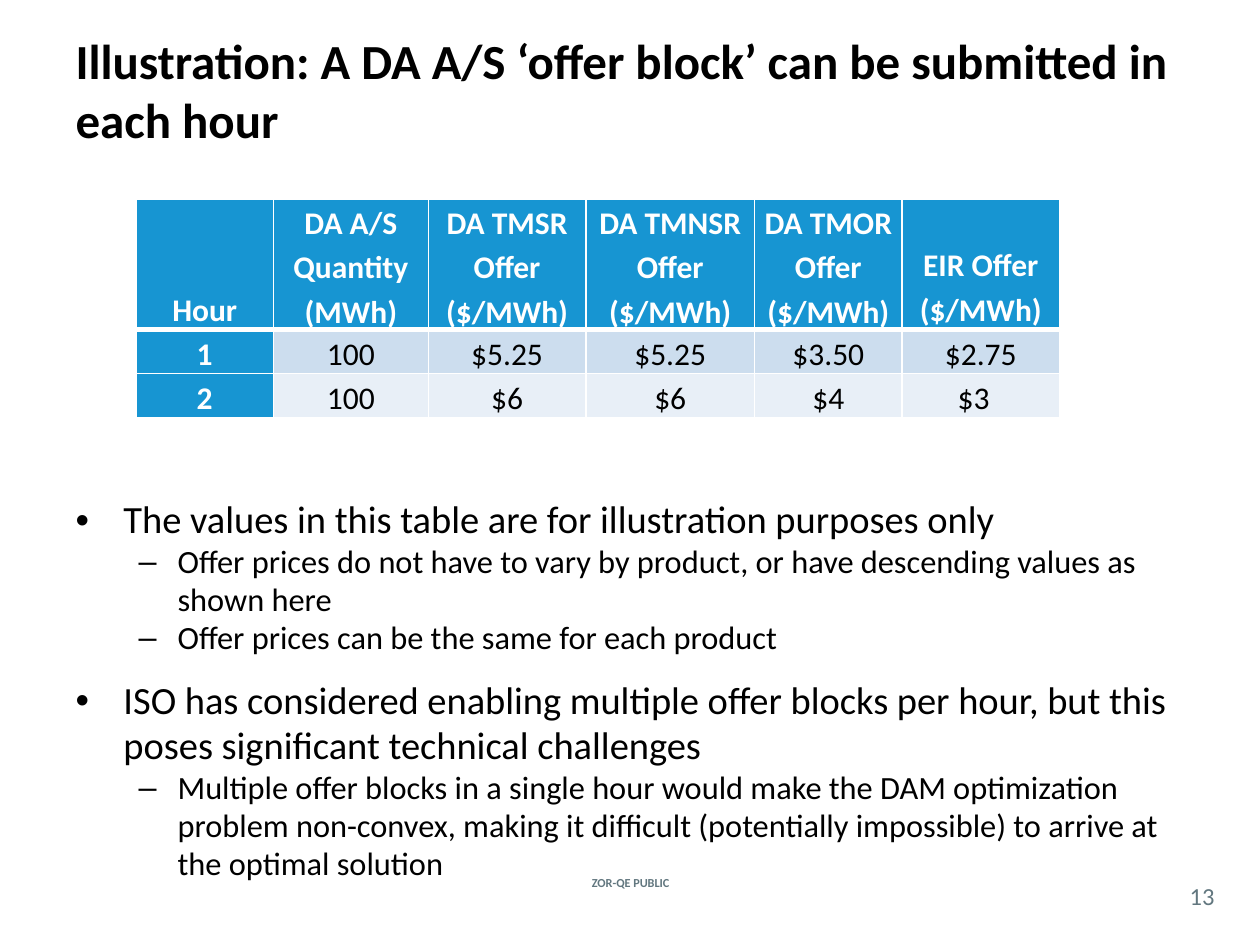
from lxml import etree
from pptx import Presentation
from pptx.dml.color import RGBColor
from pptx.enum.text import MSO_ANCHOR, MSO_AUTO_SIZE, PP_ALIGN
from pptx.oxml.ns import qn
from pptx.util import Inches, Pt

LEFT, CENTER = PP_ALIGN.LEFT, PP_ALIGN.CENTER
MIDDLE, BOTTOM, TOP = MSO_ANCHOR.MIDDLE, MSO_ANCHOR.BOTTOM, MSO_ANCHOR.TOP
NO_FIT = MSO_AUTO_SIZE.NONE
WIDE, HIGH = Inches(10), Inches(7.5)
FACE = "Calibri"
COLORS = {"ink": "000000", "white": "FFFFFF", "blue": "1795D2",
          "odd": "CCDDEE", "even": "E8EFF7", "gray": "62777F"}

TITLE = "Illustration: A DA A/S ‘offer block’ can be submitted in each hour"
COLS = [1.09, 1.23, 1.25, 1.34, 1.17, 1.25]
ROWS = [1.03, 0.35, 0.35]
OFFERS = [
    ["Hour", "DA A/S Quantity (MWh)", "DA TMSR Offer ($/MWh)",
     "DA TMNSR Offer ($/MWh)", "DA TMOR Offer ($/MWh)", "EIR Offer ($/MWh)"],
    ["1", "100", "$5.25", "$5.25", "$3.50", "$2.75"],
    ["2", "100", "$6", "$6", "$4", "$3\u00a0\u00a0"],
]
POINTS = [
    (0, "The values in this table are for illustration purposes only"),
    (1, "Offer prices do not have to vary by product, or have descending "
        "values as shown here"),
    (1, "Offer prices can be the same for each product"),
    (0, "ISO has considered enabling multiple offer blocks per hour, but this "
        "poses significant technical challenges"),
    (1, "Multiple offer blocks in a single hour would make the DAM "
        "optimization problem non-convex, making it difficult (potentially "
        "impossible) to arrive at the optimal solution"),
]
LEVELS = [("•", 0.38, -0.38, 22), ("–", 0.81, -0.31, 18.5)]


def color(name):
    """Return the named colour."""
    return RGBColor.from_string(COLORS[name])


def place(shape, left, top, width, height):
    """Move a shape to shares of the slide's size."""
    shape.left, shape.top = int(WIDE * left), int(HIGH * top)
    shape.width, shape.height = int(WIDE * width), int(HIGH * height)


def style(para, size, ink="ink", bold=False, align=LEFT):
    """Set the font and alignment of a paragraph."""
    para.alignment = align
    font = para.font
    font.name, font.size, font.bold = FACE, Pt(size), bold
    font.color.rgb = color(ink)


def add_title(slide):
    """Fill the title placeholder."""
    title = slide.shapes.title
    place(title, 0.05, 0.01, 0.9, 0.17)
    frame = title.text_frame
    frame.text = TITLE
    frame.auto_size, frame.vertical_anchor = NO_FIT, MIDDLE
    style(frame.paragraphs[0], 28, bold=True)


def add_list(slide):
    """Fill the body placeholder with two levels of bullets."""
    body = slide.placeholders[1]
    place(body, 0.05, 0.52, 0.9, 0.37)
    frame = body.text_frame
    frame.text = "\n".join(text for _, text in POINTS)
    frame.auto_size, frame.vertical_anchor = NO_FIT, TOP
    for i, (para, (level, _)) in enumerate(zip(frame.paragraphs, POINTS)):
        mark, margin, indent, size = LEVELS[level]
        para.level = level
        para.line_spacing = 0.98
        para.space_before = Pt(12 if i and level == 0 else 0)
        props = para._p.get_or_add_pPr()
        props.set("marL", str(Inches(margin)))
        props.set("indent", str(Inches(indent)))
        etree.SubElement(props, qn("a:buChar")).set("char", mark)
        style(para, size)


def edge(cell, head):
    """Draw white cell borders, thicker below the header row."""
    props = cell._tc.get_or_add_tcPr()
    for i, side in enumerate(("lnL", "lnR", "lnT", "lnB")):
        line = etree.Element(qn("a:" + side))
        line.set("w", str(Pt(3 if head and side == "lnB" else 1)))
        fill = etree.SubElement(line, qn("a:solidFill"))
        etree.SubElement(fill, qn("a:srgbClr")).set("val", COLORS["white"])
        props.insert(i, line)


def fill_cell(cell, text, row, col):
    """Write and format one table cell."""
    head = row == 0
    key = head or col == 0
    cell.text = text
    cell.margin_left = cell.margin_right = Inches(0.07)
    cell.margin_top = cell.margin_bottom = 0
    cell.vertical_anchor = BOTTOM if head else TOP
    cell.fill.solid()
    shade = "blue" if key else "odd" if row % 2 else "even"
    cell.fill.fore_color.rgb = color(shade)
    para = cell.text_frame.paragraphs[0]
    para.line_spacing = 1.15
    style(para, 18, "white" if key else "ink", key, CENTER)
    edge(cell, head)


def add_offers(slide):
    """Add the table of hourly offers."""
    frame = slide.shapes.add_table(
        len(ROWS), len(COLS), Inches(1.08), Inches(1.58),
        Inches(sum(COLS)), Inches(sum(ROWS)))
    table = frame.table
    for col, width in zip(table.columns, COLS):
        col.width = Inches(width)
    for row, height in zip(table.rows, ROWS):
        row.height = Inches(height)
    for r, texts in enumerate(OFFERS):
        for c, text in enumerate(texts):
            fill_cell(table.cell(r, c), text, r, c)


def add_note(slide, text, area, size, bold=False):
    """Add a small centred text at the foot of the slide."""
    box = slide.shapes.add_textbox(0, 0, 0, 0)
    place(box, *area)
    frame = box.text_frame
    frame.text = text
    frame.word_wrap, frame.vertical_anchor = True, MIDDLE
    frame.margin_left = frame.margin_right = 0
    frame.margin_top = frame.margin_bottom = 0
    style(frame.paragraphs[0], size, "gray", bold, CENTER)


def main():
    """Build the slide and save it."""
    deck = Presentation()
    deck.slide_width, deck.slide_height = WIDE, HIGH
    slide = deck.slides.add_slide(deck.slide_layouts[1])
    add_note(slide, "ZOR-QE PUBLIC", (0.427, 0.923, 0.147, 0.023), 7, True)
    add_note(slide, "13", (0.933, 0.928, 0.042, 0.039), 14)
    add_title(slide)
    add_list(slide)
    add_offers(slide)
    deck.save("out.pptx")


if __name__ == "__main__":
    main()
